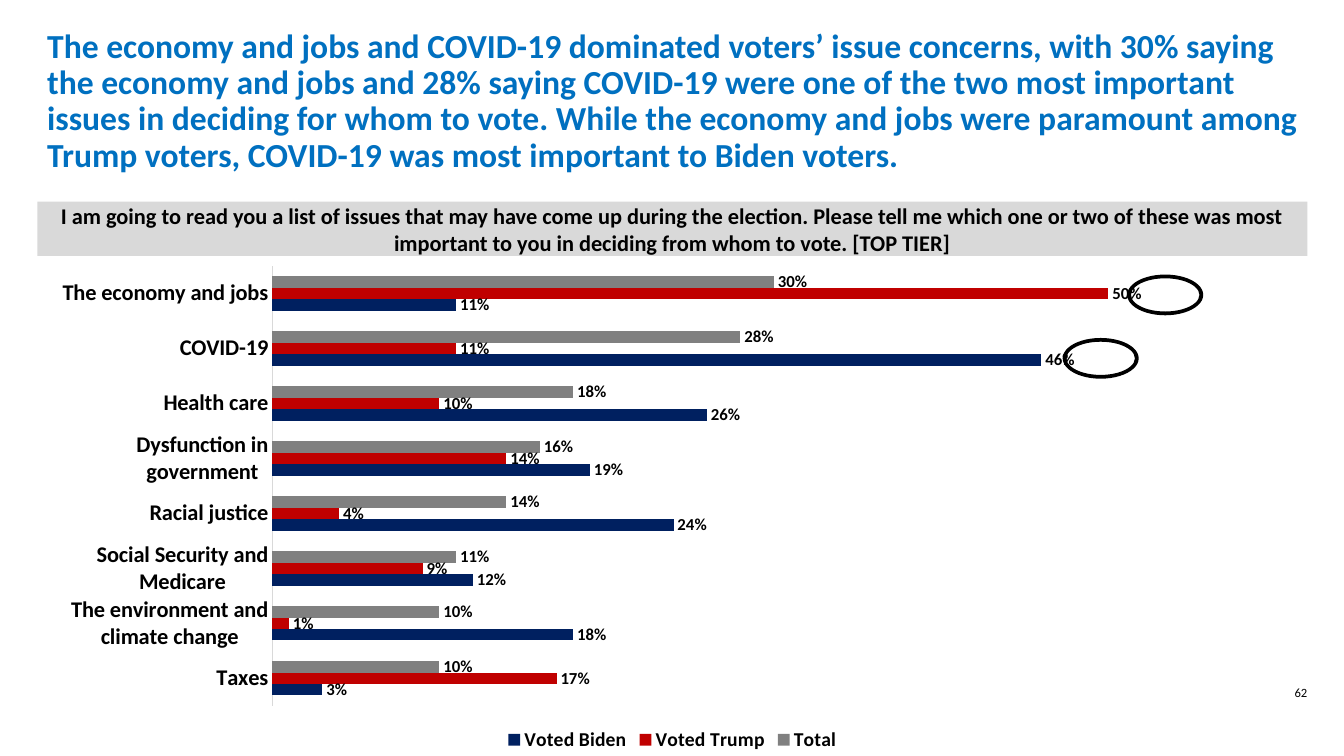
"""Build a slide on the issues that mattered most to voters."""
from dataclasses import dataclass

from lxml.etree import SubElement
from pptx import Presentation
from pptx.chart.data import CategoryChartData
from pptx.dml.color import RGBColor
from pptx.enum.chart import XL_CHART_TYPE, XL_LABEL_POSITION, XL_LEGEND_POSITION, XL_TICK_MARK
from pptx.enum.shapes import MSO_SHAPE
from pptx.enum.text import MSO_ANCHOR, PP_ALIGN
from pptx.oxml.ns import qn
from pptx.util import Pt


@dataclass(frozen=True)
class Theme:
    face: str = "Calibri"
    blue: str = "0070C0"
    black: str = "000000"
    pale: str = "D9D9D9"
    gray: str = "808080"
    red: str = "C00000"
    navy: str = "002060"
    title: int = 24
    body: int = 16
    legend: int = 14
    label: int = 12
    chart: int = 10
    page: int = 9


theme = Theme()


def style(font, size, color=theme.black, bold=True):
    font.name = theme.face
    font.size = Pt(size)
    font.bold = bold
    font.color.rgb = RGBColor.from_string(color)


def write(shape, text, size, color=theme.black, bold=True, align=PP_ALIGN.CENTER):
    frame = shape.text_frame
    frame.word_wrap = True
    frame.text = text
    para = frame.paragraphs[0]
    para.alignment = align
    style(para.runs[0].font, size, color, bold)
    return frame


deck = Presentation()
deck.slide_width, deck.slide_height = Pt(960), Pt(540)
slide = deck.slides.add_slide(deck.slide_layouts[6])
shapes = slide.shapes
left, width = Pt(26.64), Pt(907.2)

page = shapes.add_textbox(Pt(902.2), Pt(486), Pt(54), Pt(23.8))
write(page, "62", theme.page, bold=False)

title = shapes.add_textbox(left, Pt(15.8), width, Pt(113.8))
frame = write(
    title,
    "The economy and jobs and COVID-19 dominated voters’ issue concerns, with 30% saying "
    "the economy and jobs and 28% saying COVID-19 were one of the two most important "
    "issues in deciding for whom to vote. While the economy and jobs were paramount "
    "among Trump voters, COVID-19 was most important to Biden voters.",
    theme.title, theme.blue, align=PP_ALIGN.LEFT)
frame.vertical_anchor = MSO_ANCHOR.MIDDLE
frame.paragraphs[0].line_spacing = 0.9

prompt = shapes.add_shape(MSO_SHAPE.RECTANGLE, left, Pt(144), width, Pt(38.9))
prompt.shadow.inherit = False
prompt.fill.solid()
prompt.fill.fore_color.rgb = RGBColor.from_string(theme.pale)
prompt.line.fill.background()
frame = write(
    prompt,
    "I am going to read you a list of issues that may have come up during the election. "
    "Please tell me which one or two of these was most important to you in deciding "
    "from whom to vote. [TOP TIER]",
    theme.body)
frame.vertical_anchor = MSO_ANCHOR.MIDDLE

groups = [
    ("Total", theme.gray, (0.30, 0.28, 0.18, 0.16, 0.14, 0.11, 0.10, 0.10)),
    ("Voted Trump", theme.red, (0.50, 0.11, 0.10, 0.14, 0.04, 0.09, 0.01, 0.17)),
    ("Voted Biden", theme.navy, (0.11, 0.46, 0.26, 0.19, 0.24, 0.12, 0.18, 0.03)),
]
data = CategoryChartData(number_format="###0%")
data.categories = [
    "The economy and jobs", "COVID-19", "Health care", "Dysfunction in government",
    "Racial justice", "Social Security and Medicare",
    "The environment and climate change", "Taxes",
]
for name, color, shares in groups:
    data.add_series(name, shares)

chart = shapes.add_chart(
    XL_CHART_TYPE.BAR_CLUSTERED, left, Pt(182.9), width, Pt(357.1), data).chart
style(chart.font, theme.chart, bold=False)
chart.has_title = False
chart.has_legend = True
chart.legend.position = XL_LEGEND_POSITION.BOTTOM
chart.legend.include_in_layout = False
style(chart.legend.font, theme.legend)

issues = chart.category_axis
issues.reverse_order = True
issues.major_tick_mark = XL_TICK_MARK.NONE
issues.format.line.color.rgb = RGBColor.from_string(theme.pale)
issues.format.line.width = Pt(0.75)
style(issues.tick_labels.font, theme.body)

scale = chart.value_axis
scale.visible = False
scale.has_major_gridlines = False
scale.minimum_scale, scale.maximum_scale = 0, 0.6

plot = chart.plots[0]
plot.gap_width = 182
plot.overlap = 0
plot.vary_by_categories = False
for series, (name, color, shares) in zip(plot.series, groups):
    series.format.fill.solid()
    series.format.fill.fore_color.rgb = RGBColor.from_string(color)
    labels = series.data_labels
    labels.show_value = True
    labels.number_format = "###0%"
    labels.number_format_is_linked = False
    labels.position = XL_LABEL_POSITION.OUTSIDE_END
    style(labels.font, theme.label)

area = chart.element.find(".//" + qn("c:plotArea"))
layout = area.find(qn("c:layout"))
if layout is None:
    layout = SubElement(area, qn("c:layout"))
    area.insert(0, layout)
manual = SubElement(layout, qn("c:manualLayout"))
for tag, value in (("layoutTarget", "inner"), ("xMode", "edge"), ("yMode", "edge"),
                   ("x", "0.185"), ("y", "0.02"), ("w", "0.79"), ("h", "0.88")):
    SubElement(manual, qn("c:" + tag)).set("val", value)

for x, y in ((805.7, 196.6), (759.6, 241.9)):
    ring = shapes.add_shape(MSO_SHAPE.DONUT, Pt(x), Pt(y), Pt(53.3), Pt(28.1))
    ring.adjustments[0] = 0.06
    ring.shadow.inherit = False
    ring.fill.solid()
    ring.fill.fore_color.rgb = RGBColor.from_string(theme.black)
    ring.line.color.rgb = RGBColor.from_string(theme.black)
    ring.line.width = Pt(1)

deck.save("out.pptx")
